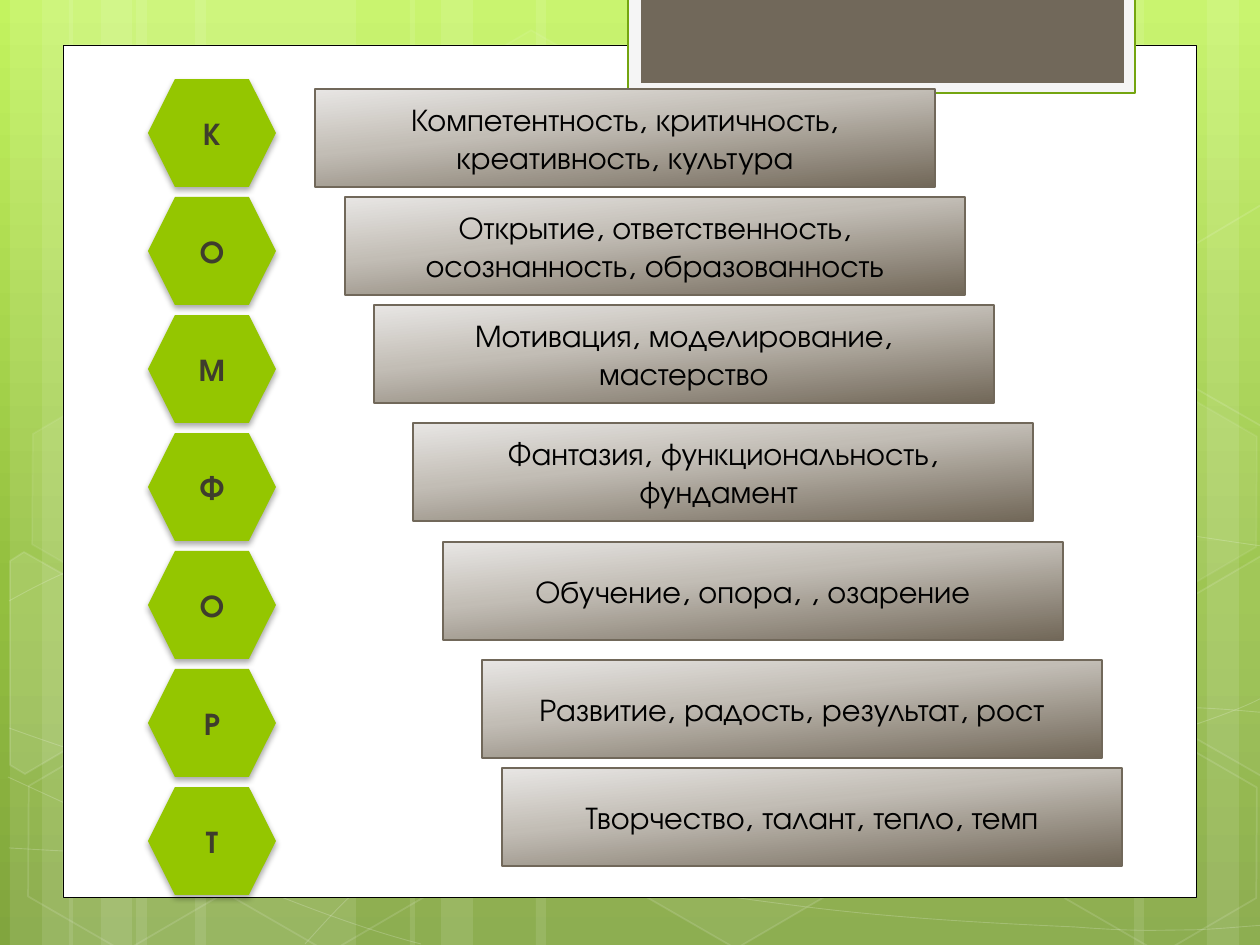
from copy import deepcopy
from dataclasses import dataclass
from typing import Optional

from lxml.etree import SubElement
from pptx import Presentation
from pptx.dml.color import RGBColor
from pptx.enum.shapes import MSO_SHAPE as Preset
from pptx.enum.text import MSO_ANCHOR as Anchor, PP_ALIGN as Align
from pptx.oxml.ns import qn
from pptx.util import Emu, Pt

EMU_PER_PX = 914400 / 126
WIDTH, HEIGHT = 1260, 945
FONT = "TeX Gyre Adventor"
COLORS = {
    "white": "FFFFFF", "black": "000000", "tab": "F5F5F5", "tab_edge": "74A510",
    "brown": "71685A", "green": "94C600", "letter": "3E3D2D",
}
SKY = [(0, "C3F35F"), (0.62, "93BF3F"), (1, "81A53E")]
BRONZE = [(0, "E8E6E4"), (0.4, "C2BDB5"), (1, "726859")]


@dataclass
class Style:
    fill: Optional[str] = None
    fill_alpha: int = 100
    line: Optional[str] = None
    line_width: float = 1
    line_alpha: int = 100


@dataclass
class Row:
    letter: str
    words: str
    left: int
    top: int


@dataclass
class Honeycomb:
    left: int
    top: int
    fill_alpha: int
    line_alpha: int


# Left and width of the pale vertical bands
BANDS = [(136, 220), (10, 63), (42, 105), (195, 220), (69, 63), (101, 105),
         (924, 220), (1207, 63), (1134, 105), (536, 388), (410, 63), (441, 105)]

# Each wave is a start point, then two controls and an end point per segment
WAVES = [
    [(9, 848), (77, 852), (145, 856), (239, 854), (334, 853), (451, 851), (577, 838),
     (703, 825), (882, 801), (998, 777), (1113, 753), (1231, 717), (1269, 694)],
    [(9, 601), (45, 581), (82, 562), (152, 543), (224, 524), (326, 499), (437, 488),
     (549, 479), (685, 478), (824, 488), (963, 498), (1193, 537), (1269, 547)],
    [(8, 777), (160, 847), (311, 916), (421, 944)],
    [(9, 728), (48, 742), (88, 756), (161, 776), (234, 795), (344, 827), (450, 848),
     (554, 869), (687, 892), (791, 905), (896, 919), (1008, 924), (1075, 927),
     (1140, 932), (1158, 930), (1191, 930), (1223, 929), (1246, 926), (1269, 925)],
    [(305, 944), (328, 919), (350, 893), (381, 871), (411, 848), (454, 823), (489, 805),
     (524, 788), (546, 780), (592, 767), (638, 754), (722, 737), (766, 728),
     (811, 719), (818, 719), (857, 717), (896, 713), (958, 709), (1000, 708),
     (1045, 707), (1116, 708), (1116, 708), (1116, 708), (1201, 708), (1201, 708),
     (1223, 709), (1245, 711), (1256, 712), (1268, 713), (1264, 712), (1268, 713)],
]

HONEYCOMBS = [
    Honeycomb(421, 45, 4, 8), Honeycomb(626, 742, 6, 12), Honeycomb(14, 745, 0, 12),
    Honeycomb(18, 393, 7, 8), Honeycomb(219, 746, 0, 12), Honeycomb(1051, 747, 0, 12),
    Honeycomb(1051, 396, 7, 8),
]

# Honeycombs cut by the slide edge: fill alpha and outline
CUT_HONEYCOMBS = [
    (10, [(10, 561), (24, 552), (121, 607), (120, 718), (25, 774), (10, 765)]),
    (4, [(1167, 611), (1261, 556), (1271, 562), (1271, 772), (1263, 777), (1167, 722)]),
    (0, [(1167, 261), (1261, 205), (1273, 212), (1271, 422), (1263, 427), (1167, 372)]),
]

ROWS = [
    Row("К", "Компетентность, критичность, креативность, культура", 315, 89),
    Row("О", "Открытие, ответственность, осознанность, образованность", 345, 197),
    Row("М", "Мотивация, моделирование, мастерство", 374, 305),
    Row("Ф", "Фантазия, функциональность, фундамент ", 413, 423),
    Row("О", "Обучение, опора, , озарение", 443, 542),
    Row("Р", "Развитие, радость, результат, рост", 482, 660),
    Row("Т", "Творчество, талант, тепло, темп", 502, 768),
]
BADGE_LEFT, BADGE_TOP, BADGE_PITCH = 148, 79, 118


def px(length: float) -> Emu:
    return Emu(round(length * EMU_PER_PX))


def rgb(name: str) -> RGBColor:
    return RGBColor.from_string(COLORS[name])


def set_alpha(element, percent: int) -> None:
    if percent < 100:
        color = element.find(f".//{qn('a:srgbClr')}")
        SubElement(color, qn("a:alpha"), val=str(percent * 1000))


def paint(shape, style: Style) -> None:
    shape.shadow.inherit = False
    properties = shape._element.spPr
    if style.fill and style.fill_alpha:
        shape.fill.solid()
        shape.fill.fore_color.rgb = rgb(style.fill)
        set_alpha(properties.find(qn("a:solidFill")), style.fill_alpha)
    else:
        shape.fill.background()
    if style.line:
        shape.line.color.rgb = rgb(style.line)
        shape.line.width = Pt(style.line_width)
        set_alpha(properties.find(qn("a:ln")), style.line_alpha)
    else:
        shape.line.fill.background()


def set_gradient(fill, element, stops, clockwise: int) -> None:
    """Give a fill, held in element, a linear gradient of three stops."""
    fill.gradient()
    fill.gradient_angle = 360 - clockwise
    stop_list = element.find(f".//{qn('a:gsLst')}")
    stop_list.append(deepcopy(stop_list[0]))
    for stop, (position, color) in zip(fill.gradient_stops, stops):
        stop.position = position
        stop.color.rgb = RGBColor.from_string(color)


def add_preset(page, preset, left, top, width, height, style: Style):
    shape = page.shapes.add_shape(preset, px(left), px(top), px(width), px(height))
    paint(shape, style)
    return shape


def add_outline(page, points, style: Style, close: bool):
    builder = page.shapes.build_freeform(*points[0], scale=EMU_PER_PX)
    builder.add_line_segments(points[1:], close=close)
    shape = builder.convert_to_shape()
    paint(shape, style)
    return shape


def bend(shape) -> None:
    """Turn every three line segments of an outline into one cubic curve."""
    outline = shape._element.find(f".//{qn('a:path')}")
    lines = outline.findall(qn("a:lnTo"))
    for start in range(0, len(lines), 3):
        curve = SubElement(outline, qn("a:cubicBezTo"))
        for line in lines[start:start + 3]:
            curve.append(line[0])
            outline.remove(line)


def write(shape, text: str, color: str, bold: bool = False) -> None:
    frame = shape.text_frame
    frame.word_wrap = True
    frame.vertical_anchor = Anchor.MIDDLE
    para = frame.paragraphs[0]
    para.text = text
    para.alignment = Align.CENTER
    font = para.font
    font.name, font.size, font.bold = FONT, Pt(18), bold
    font.color.rgb = rgb(color)


def add_drop_shadow(shape) -> None:
    effects = shape._element.spPr.find(qn("a:effectLst"))
    shadow = SubElement(effects, qn("a:outerShdw"), blurRad=str(Pt(3.5)),
                        dist=str(Pt(2.2)), dir="5400000", rotWithShape="0")
    color = SubElement(shadow, qn("a:srgbClr"), val=COLORS["black"])
    SubElement(color, qn("a:alpha"), val="32000")


def draw_backdrop(page) -> None:
    set_gradient(page.background.fill, page._element, SKY, 90)
    for left, width in BANDS:
        add_preset(page, Preset.RECTANGLE, left, 0, width, HEIGHT, Style("white", 10))
    for wave in WAVES:
        bend(add_outline(page, wave, Style(None, 0, "white", 0.5, 20), False))
    for comb in HONEYCOMBS:
        shape = add_preset(page, Preset.HEXAGON, comb.left, comb.top, 220, 192,
                           Style("white", comb.fill_alpha, "white", 1, comb.line_alpha))
        shape.adjustments[0] = 0.285
        shape.rotation = 30
    for alpha, points in CUT_HONEYCOMBS:
        add_outline(page, points, Style("white", alpha, "white", 1, 12), True)
    add_preset(page, Preset.RECTANGLE, 63, 45, 1134, 853,
               Style("white", line="black", line_width=0.5))
    add_preset(page, Preset.RECTANGLE, 628, -2, 507, 95,
               Style("tab", line="tab_edge", line_width=1.25))
    add_preset(page, Preset.RECTANGLE, 641, -2, 483, 85, Style("brown"))


def draw_badge(page, index: int, row: Row) -> None:
    badge = add_preset(page, Preset.HEXAGON, BADGE_LEFT, BADGE_TOP + index * BADGE_PITCH,
                       128, 108, Style("green"))
    add_drop_shadow(badge)
    write(badge, row.letter, "letter", bold=True)


def draw_bar(page, row: Row) -> None:
    bar = add_preset(page, Preset.RECTANGLE, row.left, row.top, 620, 98,
                     Style(line="brown", line_width=0.75))
    set_gradient(bar.fill, bar._element, BRONZE, 84)
    write(bar, row.words, "black")


def main() -> None:
    deck = Presentation()
    deck.slide_width, deck.slide_height = px(WIDTH), px(HEIGHT)
    page = deck.slides.add_slide(deck.slide_layouts[6])
    draw_backdrop(page)
    for index, row in enumerate(ROWS):
        draw_badge(page, index, row)
    for row in ROWS:
        draw_bar(page, row)
    deck.save("out.pptx")


if __name__ == "__main__":
    main()
